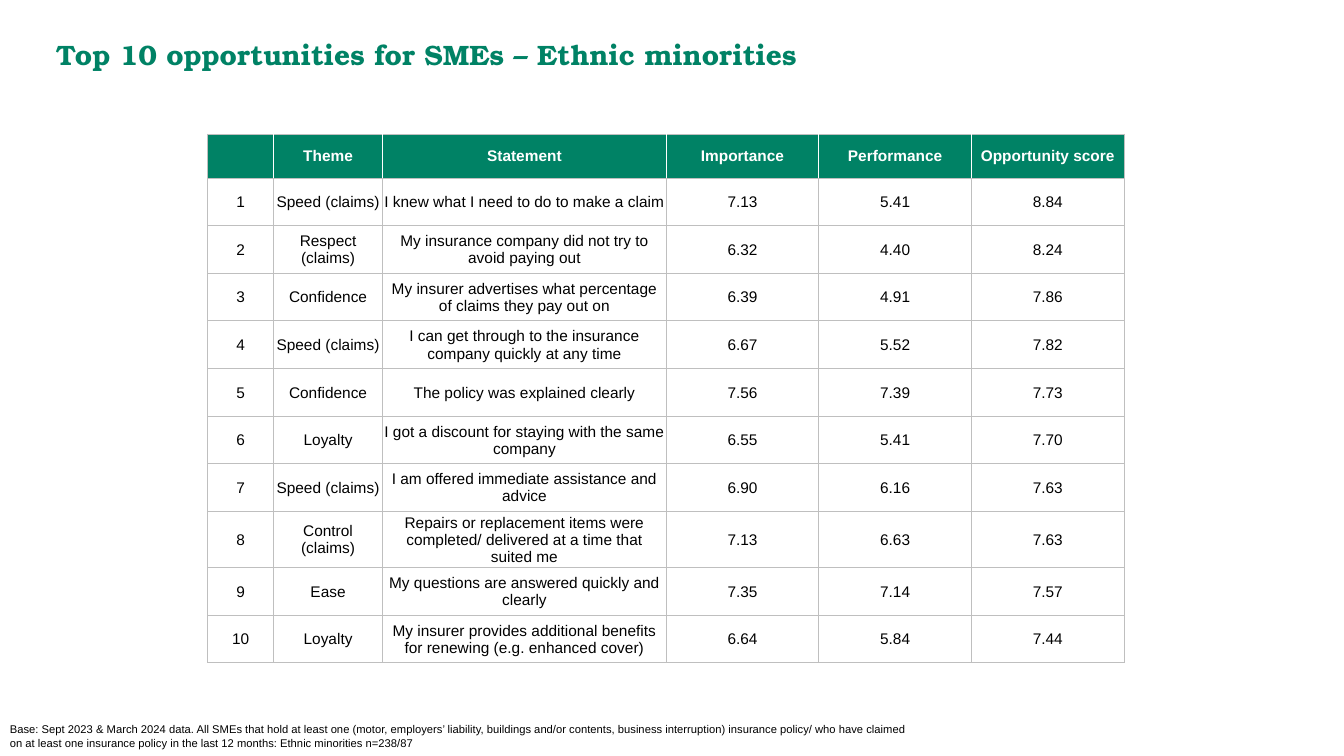
from lxml.etree import SubElement
from pptx import Presentation
from pptx.dml.color import RGBColor
from pptx.enum.text import MSO_ANCHOR, PP_ALIGN
from pptx.oxml.ns import qn
from pptx.util import Inches, Pt

GREEN = RGBColor(0x00, 0x82, 0x65)
WHITE = RGBColor(0xFF, 0xFF, 0xFF)
BLACK = RGBColor(0x00, 0x00, 0x00)
GRAY = RGBColor(0xBF, 0xBF, 0xBF)

TITLE = "Top 10 opportunities for SMEs – Ethnic minorities"
BASE_NOTE = (
    "Base: Sept 2023 & March 2024 data. All SMEs that hold at least one (motor, "
    "employers’ liability, buildings and/or contents, business interruption) insurance "
    "policy/ who have claimed on at least one insurance policy in the last 12 months: "
    "Ethnic minorities n=238/87"
)
HEADINGS = ("", "Theme", "Statement", "Importance", "Performance", "Opportunity score")
# Theme, statement, importance, performance, opportunity score
OPPORTUNITIES = [
    ("Speed (claims)", "I knew what I need to do to make a claim", 7.13, 5.41, 8.84),
    ("Respect (claims)", "My insurance company did not try to avoid paying out",
     6.32, 4.40, 8.24),
    ("Confidence", "My insurer advertises what percentage of claims they pay out on",
     6.39, 4.91, 7.86),
    ("Speed (claims)", "I can get through to the insurance company quickly at any time",
     6.67, 5.52, 7.82),
    ("Confidence", "The policy was explained clearly", 7.56, 7.39, 7.73),
    ("Loyalty", "I got a discount for staying with the same company", 6.55, 5.41, 7.70),
    ("Speed (claims)", "I am offered immediate assistance and advice", 6.90, 6.16, 7.63),
    ("Control (claims)",
     "Repairs or replacement items were completed/ delivered at a time that suited me",
     7.13, 6.63, 7.63),
    ("Ease", "My questions are answered quickly and clearly", 7.35, 7.14, 7.57),
    ("Loyalty", "My insurer provides additional benefits for renewing (e.g. enhanced cover)",
     6.64, 5.84, 7.44),
]

# Table grid, in points
COLUMN_WIDTHS = (47, 78, 202.5, 109, 109, 109)
HEADER_HEIGHT = 31.5
ROW_HEIGHT = 34


def format_runs(paragraph, size, font_name, color, bold=False):
    for run in paragraph.runs:
        run.font.size = Pt(size)
        run.font.name = font_name
        run.font.bold = bold
        run.font.color.rgb = color


def add_text(slide, box, text, size, font_name, color, bold=False):
    text_box = slide.shapes.add_textbox(*box)
    text_box.text_frame.word_wrap = True
    text_box.text_frame.text = text
    format_runs(text_box.text_frame.paragraphs[0], size, font_name, color, bold)


def add_border(cell, side, color, width):
    line = SubElement(cell._tc.get_or_add_tcPr(), qn("a:ln" + side), w=str(Pt(width)))
    fill = SubElement(line, qn("a:solidFill"))
    SubElement(fill, qn("a:srgbClr"), val=str(color))


def format_cell(cell, text, is_header, inner_sides):
    cell.vertical_anchor = MSO_ANCHOR.MIDDLE
    cell.margin_left = cell.margin_right = cell.margin_top = Inches(0.01)
    cell.margin_bottom = 0
    cell.text = text
    paragraph = cell.text_frame.paragraphs[0]
    paragraph.alignment = PP_ALIGN.CENTER
    format_runs(paragraph, 11, "Arial", WHITE if is_header else BLACK, is_header)
    # Borders go in before the fill
    for side in "LRTB":
        if is_header and side in inner_sides:
            add_border(cell, side, WHITE, 1)
        else:
            add_border(cell, side, GRAY, 0.75)
    if is_header:
        cell.fill.solid()
        cell.fill.fore_color.rgb = GREEN
    else:
        cell.fill.background()


def add_opportunity_table(slide, left, top):
    rows = [HEADINGS]
    for rank, (theme, statement, *scores) in enumerate(OPPORTUNITIES, start=1):
        rows.append((str(rank), theme, statement, *(f"{score:.2f}" for score in scores)))
    heights = [HEADER_HEIGHT] + [ROW_HEIGHT] * len(OPPORTUNITIES)
    table = slide.shapes.add_table(
        len(rows), len(HEADINGS), left, top, Pt(sum(COLUMN_WIDTHS)), Pt(sum(heights))
    ).table
    table.first_row = False
    table.horz_banding = False
    for column, width in zip(table.columns, COLUMN_WIDTHS):
        column.width = Pt(width)
    last_column = len(HEADINGS) - 1
    for row_index, values in enumerate(rows):
        table.rows[row_index].height = Pt(heights[row_index])
        for column_index, text in enumerate(values):
            inner_sides = ("L" if column_index > 0 else "") + (
                "R" if column_index < last_column else "")
            format_cell(table.cell(row_index, column_index), text,
                        row_index == 0, inner_sides)


def build_opportunity_slide(presentation):
    slide = presentation.slides.add_slide(presentation.slide_layouts[6])
    width, height = presentation.slide_width, presentation.slide_height
    # Title
    title_box = (Inches(0.46), Inches(0.32), int(width * 0.92), Inches(0.44))
    add_text(slide, title_box, TITLE, 20, "TeX Gyre Bonum", GREEN, bold=True)
    # Ranking table
    add_opportunity_table(slide, Inches(2.06), Inches(1.33))
    # Base note along the bottom edge
    note_height = Inches(0.38)
    note_box = (0, height - note_height, Inches(9.23), note_height)
    add_text(slide, note_box, BASE_NOTE, 8, "Arial", BLACK)


def main():
    presentation = Presentation()
    presentation.slide_width = Inches(13.33)
    presentation.slide_height = Inches(7.5)
    build_opportunity_slide(presentation)
    presentation.save("out.pptx")


if __name__ == "__main__":
    main()
